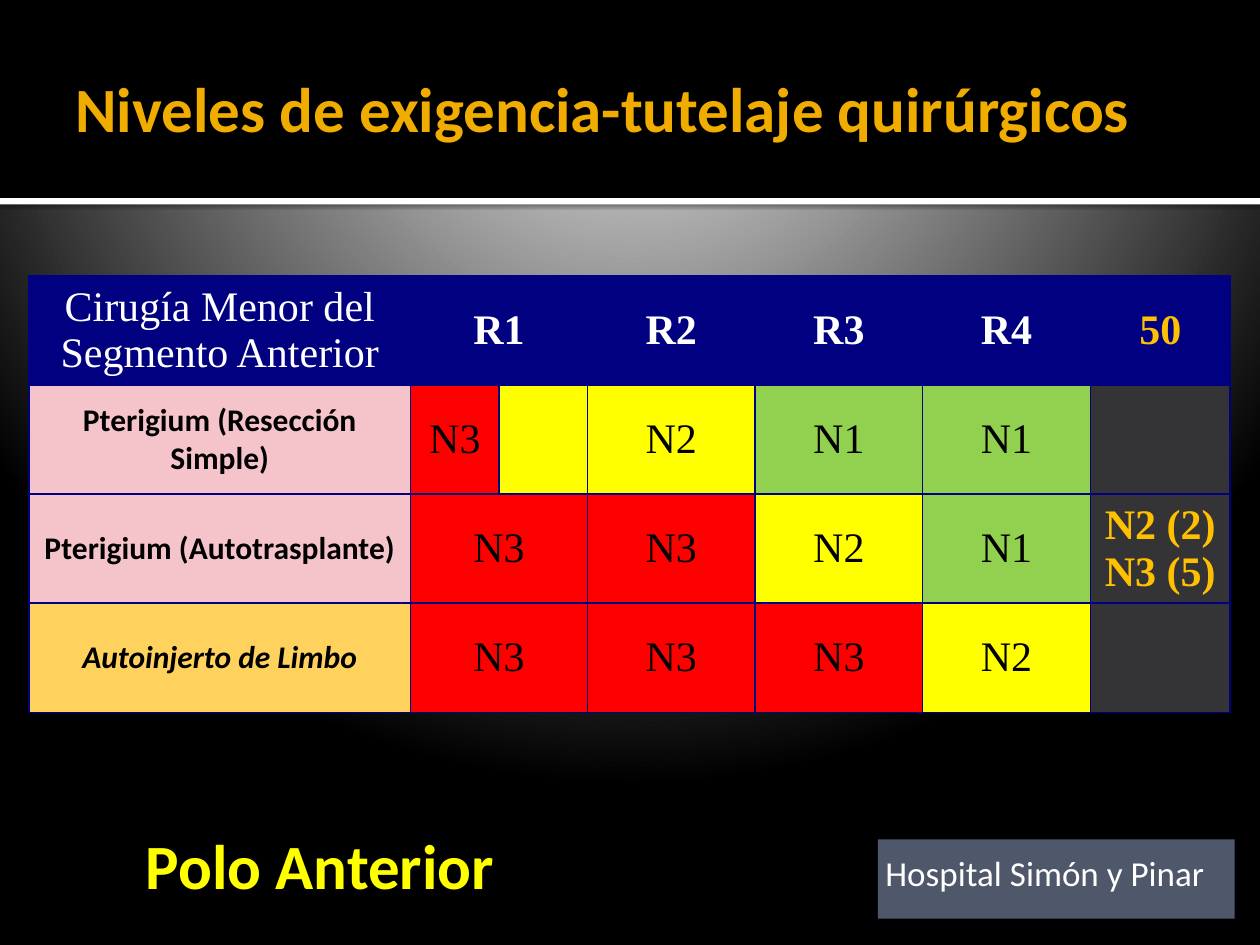
import pptx
import pptx.util
import pptx.oxml
import pptx.oxml.ns
import pptx.dml.color
import pptx.enum.shapes
import pptx.enum.text
import lxml.etree

Cm = pptx.util.Cm
Pt = pptx.util.Pt
RGB = pptx.dml.color.RGBColor
qn = pptx.oxml.ns.qn
ALIGN = pptx.enum.text.PP_ALIGN
ANCHOR = pptx.enum.text.MSO_ANCHOR
RECT = pptx.enum.shapes.MSO_SHAPE.RECTANGLE
NS = 'xmlns:a="http://schemas.openxmlformats.org/drawingml/2006/main"'

BLACK = RGB(0x00, 0x00, 0x00)
WHITE = RGB(0xFF, 0xFF, 0xFF)
GOLD = RGB(0xF0, 0xAD, 0x00)
AMBER = RGB(0xFF, 0xC0, 0x00)
YELLOW = RGB(0xFF, 0xFF, 0x00)
RED = RGB(0xFF, 0x00, 0x00)
GREEN = RGB(0x92, 0xD0, 0x50)
NAVY = RGB(0x00, 0x00, 0x80)
PINK = RGB(0xF5, 0xC4, 0xCB)
SAND = RGB(0xFF, 0xD2, 0x5D)
DARK = RGB(0x34, 0x34, 0x37)
SLATE = RGB(0x4F, 0x57, 0x6A)


def write(frame, text, size, color, face="Calibri", bold=False, italic=False, align=None):
    frame.text = text
    for para in frame.paragraphs:
        para.alignment = align
        font = para.font
        font.name, font.size = face, Pt(size)
        font.bold, font.italic = bold, italic
        font.color.rgb = color


def block(left, top, width, height, color):
    shape = slide.shapes.add_shape(RECT, Cm(left), Cm(top), Cm(width), Cm(height))
    shape.shadow.inherit = False
    shape.fill.solid()
    shape.fill.fore_color.rgb = color
    shape.line.fill.background()
    return shape


deck = pptx.Presentation()
deck.slide_width, deck.slide_height = Cm(25.4), Cm(19.05)
slide = deck.slides.add_slide(deck.slide_layouts[6])

# Background: round glow
slide.background.fill.gradient()
glow = next(slide.element.iter(qn("a:gradFill")))
stops = [(0, "C0C0C0"), (12, "C0C0C0"), (20, "BEBEBE"), (100, "000000")]
marks = "".join(f'<a:gs pos="{pos * 1000}"><a:srgbClr val="{tone}"/></a:gs>' for pos, tone in stops)
glow.getparent().replace(glow, pptx.oxml.parse_xml(
    f'<a:gradFill {NS} rotWithShape="1"><a:gsLst>{marks}</a:gsLst><a:path path="circle">'
    '<a:fillToRect l="10000" t="-25000" r="10000" b="125000"/></a:path></a:gradFill>'))

# Title band and rule with shadow
rule = block(0, 3.99, 25.4, 0.13, WHITE)
next(rule.element.iter(qn("a:effectLst"))).append(pptx.oxml.parse_xml(
    f'<a:outerShdw {NS} blurRad="31750" dist="10160" dir="5400000">'
    '<a:srgbClr val="000000"><a:alpha val="60000"/></a:srgbClr></a:outerShdw>'))
block(0, 0, 25.4, 3.99, BLACK)

# Title
title = slide.shapes.add_textbox(Cm(1.27), Cm(0.43), Cm(22.86), Cm(3.48)).text_frame
title.word_wrap = True
title.vertical_anchor = ANCHOR.MIDDLE
title.margin_right = Cm(0.13)
write(title, "Niveles de exigencia-tutelaje quirúrgicos", 36, GOLD, bold=True)

# Footer label and hospital tag
foot = slide.shapes.add_textbox(Cm(2.69), Cm(16.54), Cm(12.8), Cm(1.8)).text_frame
foot.word_wrap = True
foot.auto_size = pptx.enum.text.MSO_AUTO_SIZE.SHAPE_TO_FIT_TEXT
write(foot, "Polo Anterior", 36, YELLOW, bold=True)

tag = block(17.7, 16.92, 7.19, 1.6, SLATE).text_frame
tag.word_wrap = True
tag.vertical_anchor = ANCHOR.TOP
tag.margin_left, tag.margin_top = Cm(0.15), Cm(0.25)
write(tag, "Hospital Simón y Pinar", 20, WHITE, align=ALIGN.LEFT)

# Table: row label, label fill, then one level per column
tints = {"N1": GREEN, "N2": YELLOW, "N3": RED}
rows = [
    ("Cirugía Menor del Segmento Anterior", NAVY, ["R1", "", "R2", "R3", "R4", "50"]),
    ("Pterigium (Resección Simple)", PINK, ["N3", "", "N2", "N1", "N1", ""]),
    ("Pterigium (Autotrasplante)", PINK, ["N3", "", "N3", "N2", "N1", "N2 (2)\nN3 (5)"]),
    ("Autoinjerto de Limbo", SAND, ["N3", "", "N3", "N3", "N2", ""]),
]
wides = [7.7, 1.78, 1.78, 3.38, 3.38, 3.38, 2.82]
high = 2.2
grid = slide.shapes.add_table(len(rows), len(wides), Cm(0.58), Cm(5.56),
                              Cm(sum(wides)), Cm(high * len(rows))).table
for col, wide in zip(grid.columns, wides):
    col.width = Cm(wide)

for r, (label, shade, marks) in enumerate(rows):
    grid.rows[r].height = Cm(high)
    for c, text in enumerate([label] + marks):
        cell = grid.cell(r, c)
        head, last = r == 0, c == len(marks)
        cell.vertical_anchor = ANCHOR.MIDDLE
        cell.margin_left = cell.margin_right = Cm(0.18)
        cell.margin_top = cell.margin_bottom = 0
        if c == 0 and not head:
            write(cell.text_frame, text, 18, BLACK, bold=True,
                  italic=shade == SAND, align=ALIGN.CENTER)
        else:
            color = AMBER if last else WHITE if head else BLACK
            write(cell.text_frame, text, 24, color, "Times New Roman",
                  bold=last or (head and c > 0), align=ALIGN.CENTER)
        cell.fill.solid()
        cell.fill.fore_color.rgb = (
            shade if head or c == 0 else DARK if last else tints.get(text, YELLOW))
        # Navy border on all sides
        for i, side in enumerate("LRTB"):
            cell._tc.get_or_add_tcPr().insert(i, pptx.oxml.parse_xml(
                f'<a:ln{side} {NS} w="12700"><a:solidFill><a:srgbClr val="{NAVY}"/>'
                f'</a:solidFill></a:ln{side}>'))
    # R1 is split only in the first data row
    if r != 1:
        grid.cell(r, 1).merge(grid.cell(r, 2))

deck.save("out.pptx")
